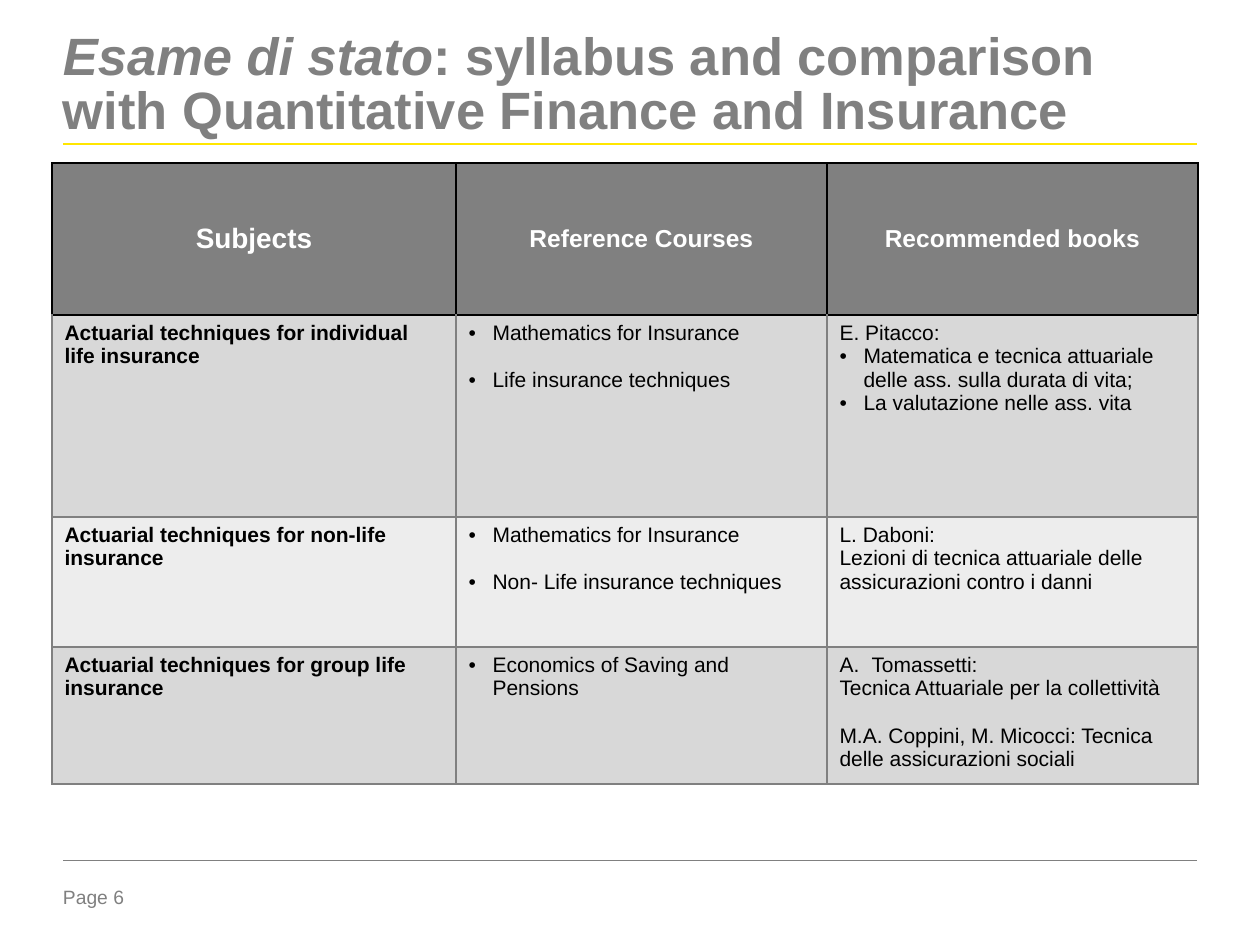
from lxml.etree import SubElement as sub_element
from pptx import Presentation
from pptx.dml.color import RGBColor as RGB
from pptx.enum.shapes import MSO_CONNECTOR as CONNECTOR
from pptx.enum.text import MSO_ANCHOR as ANCHOR, PP_ALIGN as ALIGN
from pptx.oxml.ns import qn
from pptx.util import Pt

SCALE = 914400 / 126  # EMU per px
COLORS = {
    "gray": "808080", "yellow": "FFE600", "white": "FFFFFF", "black": "000000",
    "dark_band": "D8D8D8", "light_band": "EDEDED",
}
FONT = "Arial"
LEFT, RIGHT = 63, 1197
COLUMNS = [404, 371, 371]
ROWS = [152, 202, 130, 131]
BODY_SIZE = 12
LINE_GAP = 13.5  # one body line, in points

HEADERS = [("Subjects", 16), ("Reference Courses", 14), ("Recommended books", 14)]
# Each paragraph: text, marker ("", "•" or "A."), space before in points
BODY = [
    ("Actuarial techniques for individual life insurance",
     [("Mathematics for Insurance", "•", 0),
      ("Life insurance techniques", "•", LINE_GAP)],
     [("E. Pitacco:", "", 0),
      ("Matematica e tecnica attuariale delle ass. sulla durata di vita;", "•", 0),
      ("La valutazione nelle ass. vita", "•", 0)]),
    ("Actuarial techniques for non-life insurance",
     [("Mathematics for Insurance", "•", 0),
      ("Non- Life insurance techniques", "•", LINE_GAP)],
     [("L. Daboni:", "", 0),
      ("Lezioni di tecnica attuariale delle assicurazioni contro i danni", "", 0)]),
    ("Actuarial techniques for group life insurance",
     [("Economics of Saving and Pensions", "•", 0)],
     [("Tomassetti:", "A.", 0),
      ("Tecnica Attuariale per la collettività", "", 0),
      ("M.A. Coppini, M. Micocci: Tecnica delle assicurazioni sociali", "", LINE_GAP)]),
]


def px(value):
    return round(value * SCALE)


def color(name):
    return RGB.from_string(COLORS[name])


def add_run(paragraph, text, size, color_name, bold=False, italic=False):
    run = paragraph.add_run()
    run.text = text
    font = run.font
    font.name, font.size = FONT, Pt(size)
    font.bold, font.italic = bold, italic
    font.color.rgb = color(color_name)


def add_text_box(slide, left, top, width, height, margin_top=0):
    """Add a wrapping text box and return its first paragraph."""
    frame = slide.shapes.add_textbox(px(left), px(top), px(width), px(height)).text_frame
    frame.word_wrap = True
    frame.margin_left = frame.margin_right = frame.margin_bottom = 0
    frame.margin_top = px(margin_top)
    return frame.paragraphs[0]


def add_rule(slide, y, color_name, width):
    rule = slide.shapes.add_connector(CONNECTOR.STRAIGHT, px(LEFT), px(y), px(RIGHT), px(y))
    rule.line.color.rgb = color(color_name)
    rule.line.width = Pt(width)
    sub_element(rule._element.spPr, qn("a:effectLst"))


def set_marker(paragraph, marker):
    """Give the paragraph a hanging bullet or an upper-case letter."""
    properties = paragraph._p.get_or_add_pPr()
    indent = px(24 if marker == "•" else 32)
    properties.set("marL", str(indent))
    properties.set("indent", str(-indent))
    if marker == "•":
        sub_element(properties, qn("a:buFont"), typeface=FONT)
        sub_element(properties, qn("a:buChar"), char=marker)
    else:
        sub_element(properties, qn("a:buAutoNum"), type="alphaUcPeriod")


def style_cell(cell, fill_name, border_name, top_name):
    properties = cell._tc.get_or_add_tcPr()
    for side in "LRTB":
        line = sub_element(properties, qn(f"a:ln{side}"), w=str(Pt(1)))
        fill = sub_element(line, qn("a:solidFill"))
        name = top_name if side == "T" else border_name
        sub_element(fill, qn("a:srgbClr"), val=COLORS[name])
    cell.fill.solid()
    cell.fill.fore_color.rgb = color(fill_name)


def fill_cell(cell, paragraphs, bold=False):
    frame = cell.text_frame
    for index, (text, marker, gap) in enumerate(paragraphs):
        paragraph = frame.add_paragraph() if index else frame.paragraphs[0]
        if gap:
            paragraph.space_before = Pt(gap)
        if marker:
            set_marker(paragraph, marker)
        add_run(paragraph, text, BODY_SIZE, "black", bold)


def add_syllabus_table(slide, left, top):
    table = slide.shapes.add_table(
        len(ROWS), len(COLUMNS), px(left), px(top), px(sum(COLUMNS)), px(sum(ROWS))).table
    for column, width in zip(table.columns, COLUMNS):
        column.width = px(width)
    for row, height in zip(table.rows, ROWS):
        row.height = px(height)

    # Header row
    for index, (text, size) in enumerate(HEADERS):
        cell = table.cell(0, index)
        style_cell(cell, "gray", "black", "black")
        cell.vertical_anchor = ANCHOR.MIDDLE
        paragraph = cell.text_frame.paragraphs[0]
        paragraph.alignment = ALIGN.CENTER
        add_run(paragraph, text, size, "white", bold=True)

    # Subject rows in alternating bands
    for row, (subject, courses, books) in enumerate(BODY, start=1):
        band = "dark_band" if row % 2 else "light_band"
        top_line = "black" if row == 1 else "gray"
        for column, paragraphs in enumerate([[(subject, "", 0)], courses, books]):
            cell = table.cell(row, column)
            style_cell(cell, band, "gray", top_line)
            fill_cell(cell, paragraphs, bold=column == 0)


def main():
    presentation = Presentation()
    presentation.slide_width, presentation.slide_height = px(1260), px(945)
    slide = presentation.slides.add_slide(presentation.slide_layouts[6])

    # Footer and rules
    add_run(add_text_box(slide, LEFT, 885, 100, 28), "Page 6", 11, "gray")
    add_rule(slide, 144, "yellow", 1.5)
    add_rule(slide, 860, "gray", 0.25)

    # Title
    title = add_text_box(slide, LEFT, 28, RIGHT - LEFT, 118, margin_top=5)
    title.line_spacing = 0.85
    add_run(title, "Esame di stato", 30, "gray", bold=True, italic=True)
    add_run(title, ": syllabus and comparison with Quantitative Finance and Insurance",
            30, "gray", bold=True)

    add_syllabus_table(slide, 52, 163)
    presentation.save("out.pptx")


if __name__ == "__main__":
    main()
